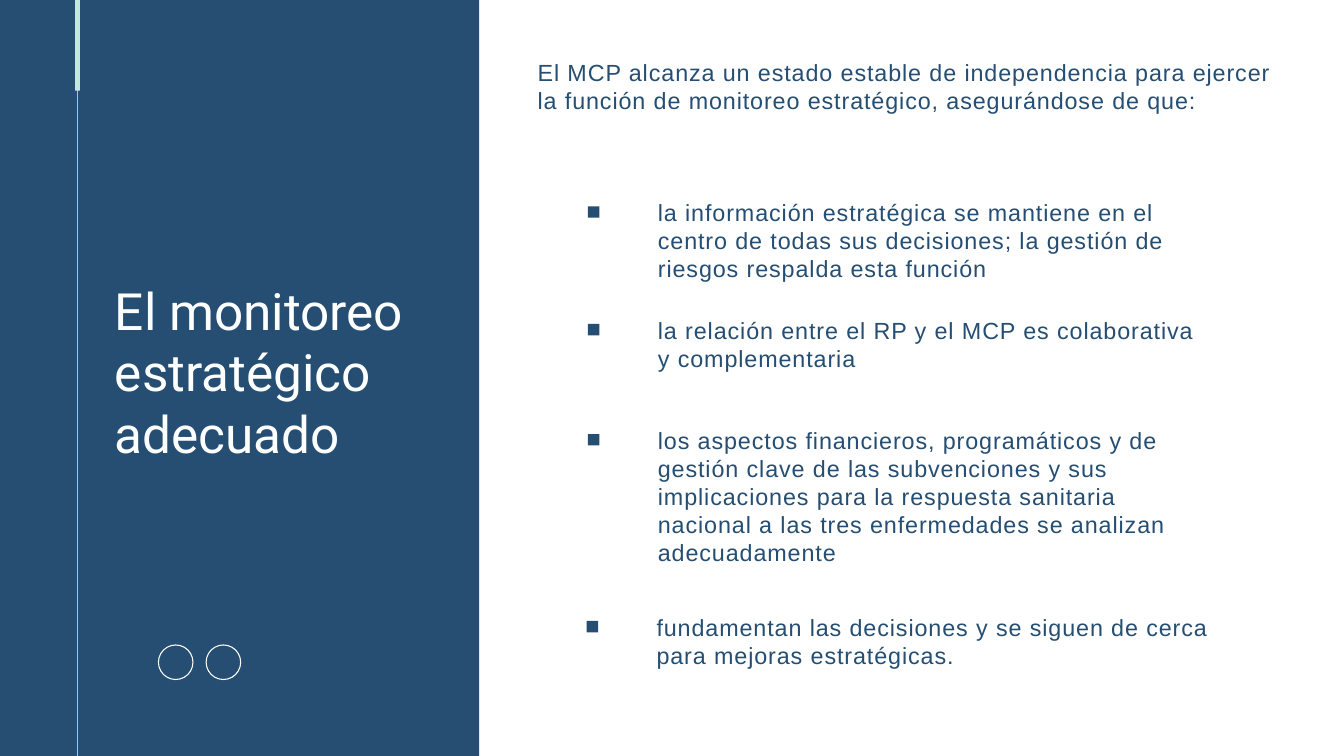
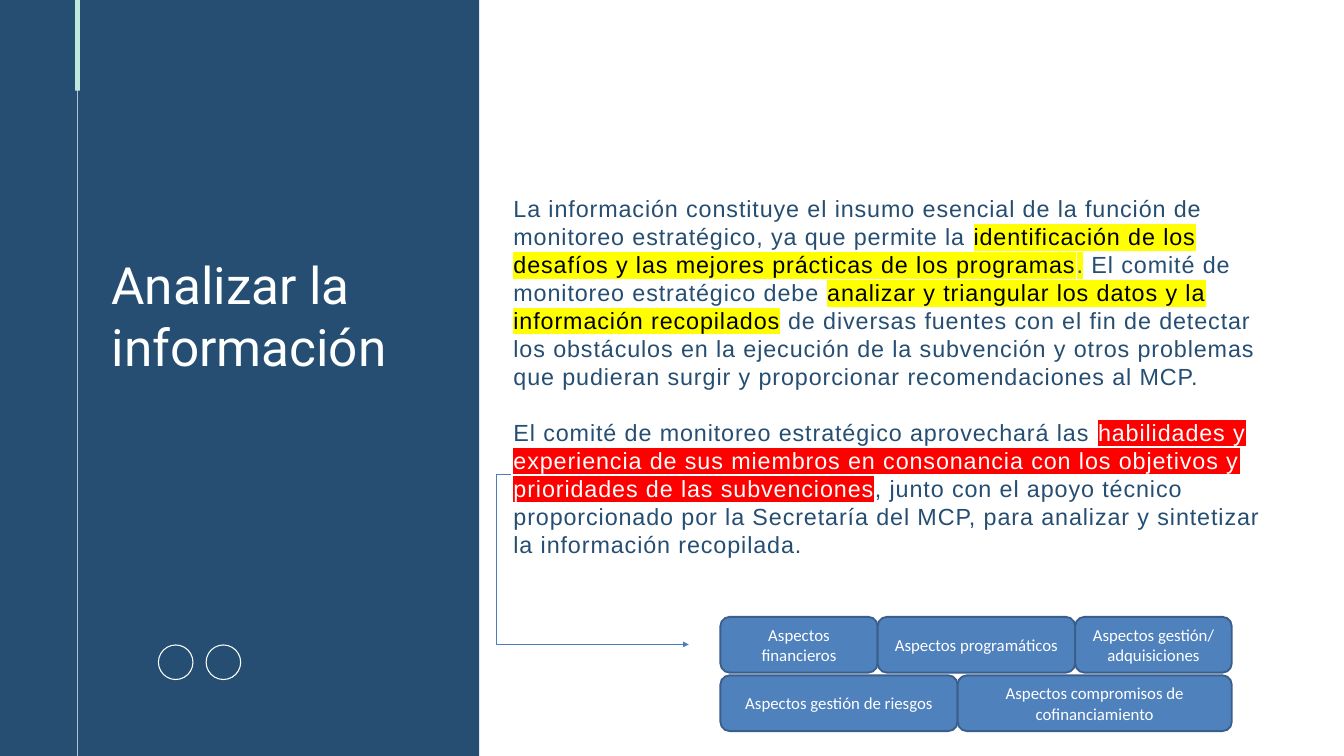
import pptx
import pptx.dml.color
import pptx.enum.dml
import pptx.enum.shapes
import pptx.enum.text
import pptx.oxml
import pptx.oxml.ns
import pptx.util

RGBColor = pptx.dml.color.RGBColor
SHAPES = pptx.enum.shapes.MSO_SHAPE
ALIGN = pptx.enum.text.PP_ALIGN
ANCHOR = pptx.enum.text.MSO_ANCHOR
AUTO_SIZE = pptx.enum.text.MSO_AUTO_SIZE
qn = pptx.oxml.ns.qn
Pt = pptx.util.Pt

NAVY = RGBColor(0x25, 0x4E, 0x72)
OFF_WHITE = RGBColor(0xFE, 0xFF, 0xFF)
WHITE = RGBColor(0xFF, 0xFF, 0xFF)
BLACK = RGBColor(0, 0, 0)
MINT = RGBColor(0xC0, 0xE8, 0xDF)
YELLOW = RGBColor(0xFF, 0xFF, 0)
RED = RGBColor(0xFF, 0, 0)
BLUE = RGBColor(0x4F, 0x81, 0xBD)
BLUE_EDGE = RGBColor(0x3A, 0x5F, 0x8C)
BLUE_ARROW = RGBColor(0x4B, 0x7E, 0xBC)

PX = 9144  # 100 px to the inch
SLIDE_W, SLIDE_H = 2000, 1125

PLAIN_FRAME = dict(margin_left=0, margin_top=0, margin_right=0, margin_bottom=0,
                   word_wrap=True, vertical_anchor=ANCHOR.TOP,
                   auto_size=AUTO_SIZE.SHAPE_TO_FIT_TEXT)
TITLE_FONT = dict(name="Roboto", size=Pt(55))
BODY_FONT = dict(name="Arial", size=Pt(25))
LABEL_FONT = dict(name="Calibri", size=Pt(18))
TITLE_PARA = dict(alignment=ALIGN.LEFT, line_spacing=Pt(66), space_before=Pt(0))
BODY_PARA = dict(alignment=ALIGN.LEFT, line_spacing=Pt(30), space_before=Pt(0))
LABEL_PARA = dict(alignment=ALIGN.CENTER)


def apply(target, formats):
    for name, value in formats.items():
        setattr(target, name, value)


def emu(box):
    return [value * PX for value in box]


def move(shape, box):
    apply(shape, dict(zip(("left", "top", "width", "height"), emu(box))))


def add_filled(shapes, kind, box, fill, edge=None):
    shape = shapes.add_shape(kind, *emu(box))
    shape.shadow.inherit = False
    shape.fill.solid()
    shape.fill.fore_color.rgb = fill
    if edge is None:
        shape.line.fill.background()
    else:
        shape.line.color.rgb = edge
        shape.line.width = Pt(2)
    return shape


def add_span(para, text, font, color, highlight=None, spacing=0):
    span = para.add_run()
    span.text = text
    apply(span.font, font)
    span.font.color.rgb = color
    properties = span._r.get_or_add_rPr()
    if spacing:
        properties.set("spc", str(spacing))
    if highlight is not None:
        mark = pptx.oxml.parse_xml(
            f'<a:highlight {pptx.oxml.ns.nsdecls("a")}>'
            f'<a:srgbClr val="{highlight}"/></a:highlight>')
        properties.find(qn("a:solidFill")).addnext(mark)


def write_body(shape, box, paragraphs):
    """Each paragraph is a list of (text, color, highlight) spans."""
    move(shape, box)
    frame = shape.text_frame
    apply(frame, PLAIN_FRAME)
    for index, spans in enumerate(paragraphs):
        para = frame.add_paragraph() if index else frame.paragraphs[0]
        apply(para, BODY_PARA)
        if index:
            para.space_before = BODY_PARA["line_spacing"]
        # No bullet and no indent
        properties = para._p.get_or_add_pPr()
        properties.set("marL", "0")
        properties.set("indent", "0")
        properties.append(properties.makeelement(qn("a:buNone"), {}))
        for text, color, highlight in spans:
            add_span(para, text, BODY_FONT, color, highlight, spacing=100)


def add_side_panel(page, box, title, title_left, title_top, title_height):
    left, top, width, height = box
    add_filled(page.shapes, SHAPES.RECTANGLE, box, NAVY)

    # Vertical rule with its mint accent
    rule = page.shapes.add_group_shape()
    add_filled(rule.shapes, SHAPES.RECTANGLE,
               (left + 115, top + 112, 1, height - 112), OFF_WHITE)
    add_filled(rule.shapes, SHAPES.RECTANGLE, (left + 112, top, 7, 135), MINT)

    # Pair of thin rings
    for index in range(2):
        ring = add_filled(page.shapes, SHAPES.DONUT,
                          (left + 235 + 71 * index, top + 959, 53, 53), OFF_WHITE)
        ring.adjustments[0] = 0.03

    # Title, brought in front of the panel
    heading = page.shapes.title
    move(heading, (left + title_left, top + title_top, 488, title_height))
    apply(heading.text_frame, PLAIN_FRAME)
    para = heading.text_frame.paragraphs[0]
    apply(para, TITLE_PARA)
    add_span(para, title, TITLE_FONT, OFF_WHITE)
    page.shapes._spTree.append(heading._element)


def add_bullet_row(page, box, text):
    left, top, width, height = box
    add_filled(page.shapes, SHAPES.RECTANGLE, (left, top + 12, 17, 17), NAVY)
    item = page.shapes.add_textbox(0, 0, 0, 0)
    write_body(item, (left + 104, top, width - 104, height), [[(text, NAVY, None)]])


def add_aspect_grid(page, box, rows):
    left, top, width, height = box
    pitch = 87
    for row, cells in enumerate(rows):
        cell_left = left
        for label, cell_width in cells:
            cell = add_filled(page.shapes, SHAPES.ROUNDED_RECTANGLE,
                              (cell_left, top + row * pitch, cell_width, height - pitch),
                              BLUE, BLUE_EDGE)
            cell.text_frame.vertical_anchor = ANCHOR.MIDDLE
            para = cell.text_frame.paragraphs[0]
            apply(para, LABEL_PARA)
            add_span(para, label, LABEL_FONT, WHITE)
            cell_left += cell_width


def add_bent_arrow(page, box, bend):
    left, top, width, height = box
    arrow = page.shapes.add_connector(
        pptx.enum.shapes.MSO_CONNECTOR.ELBOW,
        *emu((left, top, left + width, top + height)))
    arrow.line.color.rgb = BLUE_ARROW
    arrow.line.width = Pt(0.75)
    properties = arrow._element.spPr
    line = properties.find(qn("a:ln"))
    line.append(line.makeelement(qn("a:tailEnd"), {"type": "triangle"}))
    properties.append(properties.makeelement(qn("a:effectLst"), {}))
    # Bend position in thousandths of a percent of the width
    guides = properties.find(qn("a:prstGeom")).get_or_add_avLst()
    guides.append(guides.makeelement(
        qn("a:gd"), {"name": "adj1", "fmla": f"val {bend}"}))


def build_monitoring_page(page, panel):
    add_side_panel(page, panel, "El monitoreo estratégico adecuado", 171, 415, 278)
    intro = ("El MCP alcanza un estado estable de independencia para ejercer la función "
             "de monitoreo estratégico, asegurándose de que:")
    write_body(page.placeholders[1], (800, 87, 1111, 84), [[(intro, NAVY, None)]])
    items = [
        (875, 295, 126, "la información estratégica se mantiene en el centro de todas sus "
                        "decisiones; la gestión de riesgos respalda esta función"),
        (875, 470, 84, "la relación entre el RP y el MCP es colaborativa y complementaria"),
        (875, 634, 210, "los aspectos financieros, programáticos y de gestión clave de las "
                        "subvenciones y sus implicaciones para la respuesta sanitaria "
                        "nacional a las tres enfermedades se analizan adecuadamente"),
        (873, 912, 84, "fundamentan las decisiones y se siguen de cerca para mejoras "
                       "estratégicas."),
    ]
    for left, top, height, text in items:
        add_bullet_row(page, (left, top, 927, height), text)


def build_analysis_page(page, panel):
    add_side_panel(page, panel, "Analizar la información", 166, 377, 185)
    write_body(page.placeholders[1], (764, 289, 1138, 547), [
        [("La información constituye el insumo esencial de la función de monitoreo "
          "estratégico, ya que permite la ", NAVY, None),
         ("identificación de los desafíos y las mejores prácticas de los programas",
          BLACK, YELLOW),
         (".", NAVY, YELLOW),
         (" El comité de monitoreo estratégico debe ", NAVY, None),
         ("analizar y triangular los datos y la información recopilados", BLACK, YELLOW),
         (" de diversas fuentes con el fin de detectar los obstáculos en la ejecución de "
          "la subvención y otros problemas que pudieran surgir y proporcionar "
          "recomendaciones al MCP.", NAVY, None)],
        [("El comité de monitoreo estratégico aprovechará las ", NAVY, None),
         ("habilidades y experiencia de sus miembros en consonancia con los objetivos y "
          "prioridades de las subvenciones", WHITE, RED),
         (", junto con el apoyo técnico proporcionado por la Secretaría del MCP, para "
          "analizar y sintetizar la información recopilada.", NAVY, None)],
    ])
    add_bent_arrow(page, (761, 706, 264, 253), -8600)
    add_aspect_grid(page, (1072, 918, 761, 170), [
        [("Aspectos financieros", 234), ("Aspectos programáticos", 294),
         ("Aspectos gestión/ adquisiciones", 233)],
        [("Aspectos gestión de riesgos", 353),
         ("Aspectos compromisos de cofinanciamiento", 408)],
    ])


def main():
    deck = pptx.Presentation()
    deck.slide_width, deck.slide_height = emu((SLIDE_W, SLIDE_H))
    panel = (0, 0, 713, SLIDE_H)
    for build in (build_monitoring_page, build_analysis_page):
        build(deck.slides.add_slide(deck.slide_layouts[1]), panel)
    deck.save("out.pptx")


if __name__ == "__main__":
    main()
